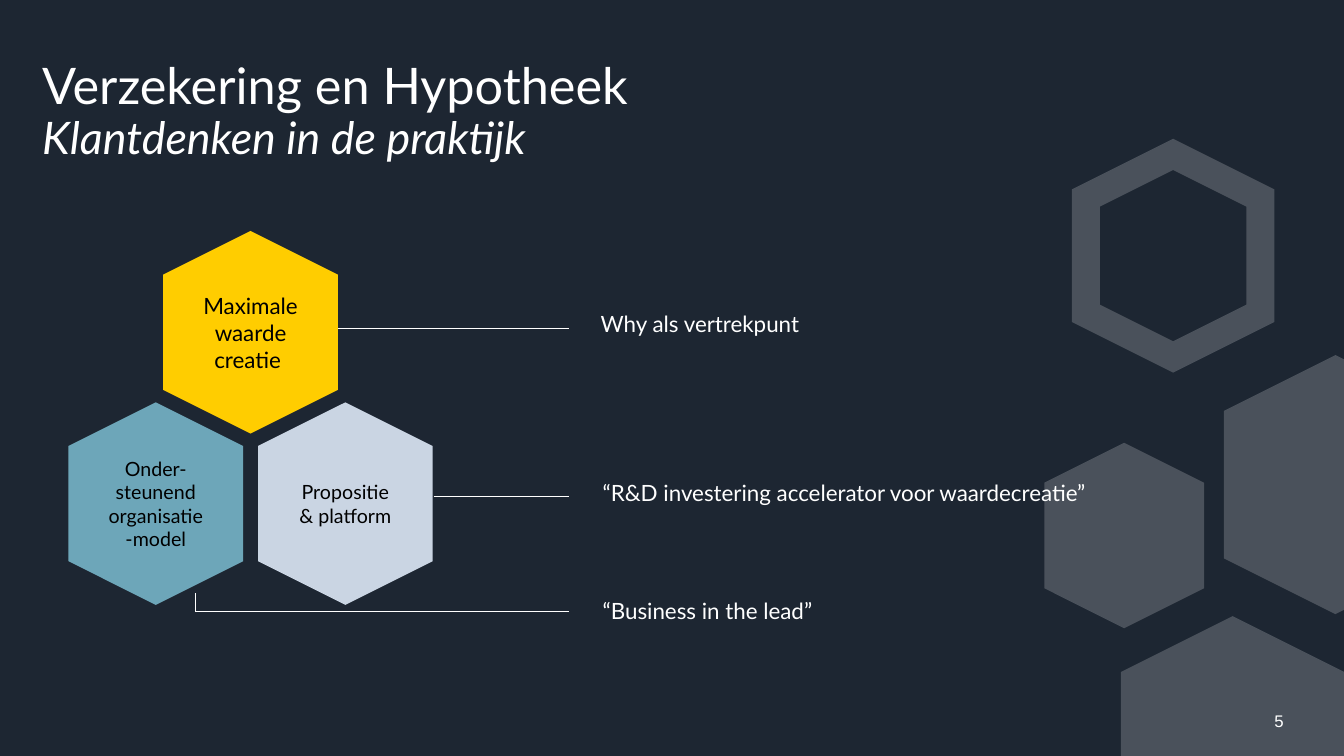
from dataclasses import dataclass

from lxml import etree
from pptx import Presentation
from pptx.dml.color import RGBColor
from pptx.enum.shapes import MSO_CONNECTOR, MSO_SHAPE
from pptx.enum.text import MSO_ANCHOR, PP_ALIGN
from pptx.oxml.ns import qn
from pptx.util import Inches, Pt

HEXAGON = MSO_SHAPE.HEXAGON
STRAIGHT = MSO_CONNECTOR.STRAIGHT
TOP, MIDDLE = MSO_ANCHOR.TOP, MSO_ANCHOR.MIDDLE
CENTER = PP_ALIGN.CENTER

NIGHT = RGBColor(0x1D, 0x26, 0x32)
WHITE = RGBColor(0xFF, 0xFF, 0xFF)
BLACK = RGBColor(0x00, 0x00, 0x00)
YELLOW = RGBColor(0xFF, 0xCD, 0x00)
MIST = RGBColor(0xCA, 0xD5, 0xE3)
TEAL = RGBColor(0x6D, 0xA6, 0xB9)

HEXAGON_RATIO = 0.862
CELL_LENGTH = 2.01
FAINT = "20000"


@dataclass(frozen=True)
class Cell:
    left: float
    top: float
    text: str
    size: int
    color: RGBColor


@dataclass(frozen=True)
class Backdrop:
    left: float
    top: float
    length: float
    ring: bool = False


@dataclass(frozen=True)
class Label:
    left: float
    top: float
    width: float
    height: float
    text: str
    size: int = 16
    font: str = "Lato"
    anchor: MSO_ANCHOR = TOP


@dataclass(frozen=True)
class Leader:
    x1: float
    y1: float
    x2: float
    y2: float


CELLS = [
    Cell(1.48, 2.43, "Maximale waarde creatie ", 16, YELLOW),
    Cell(2.42, 4.13, "Propositie & platform", 14, MIST),
    Cell(0.54, 4.13, "Onder-steunend organisatie-model", 14, TEAL),
]
LABELS = [
    Label(12.54, 6.95, 0.67, 0.4, "5", 12, "Arial", MIDDLE),
    Label(5.86, 3.03, 5.24, 0.37, "Why als vertrekpunt"),
    Label(5.88, 4.7, 6.54, 0.37, "“R&D investering accelerator voor waardecreatie”"),
    Label(5.88, 5.88, 5.24, 0.37, "“Business in the lead”"),
]
LEADERS = [
    Leader(3.35, 3.26, 5.64, 3.26),
    Leader(4.3, 4.93, 5.64, 4.93),
    Leader(1.94, 6.07, 5.64, 6.07),
    Leader(1.94, 6.07, 1.94, 5.88),
]
BACKDROPS = [
    Backdrop(11.96, 3.7, 2.57),
    Backdrop(10.94, 6.29, 2.57),
    Backdrop(10.23, 4.52, 1.84),
    Backdrop(10.63, 1.67, CELL_LENGTH, ring=True),
]


def add_run(paragraph, text: str, size: int, color: RGBColor, font: str = "Lato", italic: bool = False) -> None:
    run = paragraph.add_run()
    run.text = text
    run.font.color.rgb = color
    formats = {"size": Pt(size), "name": font, "italic": italic}
    for name, value in formats.items():
        setattr(run.font, name, value)


def add_hexagon(slide, left: float, top: float, length: float):
    hexagon = slide.shapes.add_shape(
        HEXAGON, Inches(left), Inches(top), Inches(length), Inches(length * HEXAGON_RATIO)
    )
    hexagon.rotation = 90
    hexagon.shadow.inherit = False
    return hexagon


def add_cell(slide, cell: Cell) -> None:
    hexagon = add_hexagon(slide, cell.left, cell.top, CELL_LENGTH)
    hexagon.fill.solid()
    hexagon.fill.fore_color.rgb = cell.color
    hexagon.line.fill.background()
    frame = hexagon.text_frame
    frame.word_wrap = True
    frame.vertical_anchor = MIDDLE
    next(hexagon.element.iter(qn("a:bodyPr"))).set("vert", "vert270")
    paragraph = frame.paragraphs[0]
    paragraph.alignment = CENTER
    add_run(paragraph, cell.text, cell.size, BLACK)


def add_backdrop(slide, backdrop: Backdrop) -> None:
    hexagon = add_hexagon(slide, backdrop.left, backdrop.top, backdrop.length)
    if backdrop.ring:
        hexagon.fill.background()
        hexagon.line.width = Pt(20)
        hexagon.line.color.rgb = WHITE
        outline = next(hexagon.element.iter(qn("a:ln")))
        etree.SubElement(outline, qn("a:miter")).set("lim", "800000")
    else:
        hexagon.fill.solid()
        hexagon.fill.fore_color.rgb = WHITE
        hexagon.line.fill.background()
    tint = next(hexagon.element.iter(qn("a:srgbClr")))
    etree.SubElement(tint, qn("a:alpha")).set("val", FAINT)


def add_text_frame(slide, left: float, top: float, width: float, height: float, anchor: MSO_ANCHOR):
    frame = slide.shapes.add_textbox(Inches(left), Inches(top), Inches(width), Inches(height)).text_frame
    frame.word_wrap = True
    frame.vertical_anchor = anchor
    return frame


def add_title(slide) -> None:
    paragraph = add_text_frame(slide, 0.32, 0.49, 11.81, 1.26, MIDDLE).paragraphs[0]
    paragraph.line_spacing = 0.9
    add_run(paragraph, "Verzekering en Hypotheek", 36, WHITE)
    paragraph.add_line_break()
    add_run(paragraph, "Klantdenken in de praktijk", 32, WHITE, italic=True)


def add_label(slide, label: Label) -> None:
    frame = add_text_frame(slide, label.left, label.top, label.width, label.height, label.anchor)
    add_run(frame.paragraphs[0], label.text, label.size, WHITE, label.font)


def add_leader(slide, leader: Leader) -> None:
    connector = slide.shapes.add_connector(
        STRAIGHT, Inches(leader.x1), Inches(leader.y1), Inches(leader.x2), Inches(leader.y2)
    )
    connector.line.color.rgb = WHITE
    connector.line.width = Pt(0.75)
    etree.SubElement(connector.element.spPr, qn("a:effectLst"))


def main() -> None:
    deck = Presentation()
    deck.slide_width, deck.slide_height = Inches(13.33), Inches(7.5)
    slide = deck.slides.add_slide(deck.slide_layouts[6])
    slide.background.fill.solid()
    slide.background.fill.fore_color.rgb = NIGHT
    for cell in CELLS:
        add_cell(slide, cell)
    add_title(slide)
    for label in LABELS:
        add_label(slide, label)
    for leader in LEADERS:
        add_leader(slide, leader)
    for backdrop in BACKDROPS:
        add_backdrop(slide, backdrop)
    deck.save("out.pptx")


if __name__ == "__main__":
    main()
